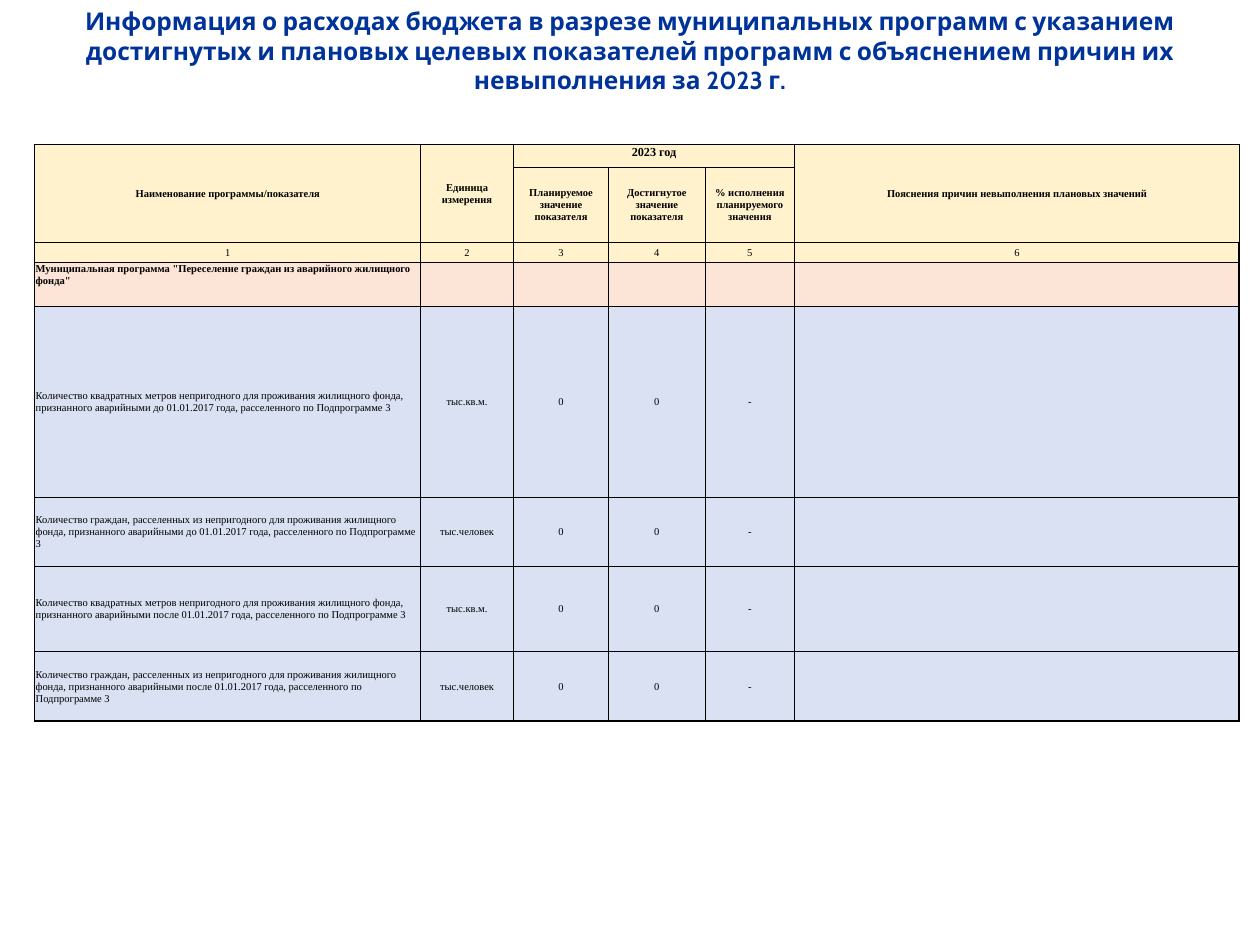
"""Builds the slide on municipal programme targets and results for 2023."""
from lxml import etree
from pptx import Presentation
from pptx import util as u
from pptx.dml.color import RGBColor
from pptx.enum import text
from pptx.oxml.ns import qn

COLOURS = {
    "title": "003399", "ink": "000000", "header": "FFF2CC",
    "programme": "FCE4D6", "indicator": "D9E1F2",
}
TITLE = ("Информация о расходах бюджета в разрезе муниципальных программ с указанием "
         "достигнутых и плановых целевых показателей программ с объяснением причин их "
         "невыполнения за 2023 г.")
HEADINGS = [
    ["Наименование программы/показателя", "Единица измерения", "2023 год", "", "",
     "Пояснения причин невыполнения плановых значений"],
    ["", "", "Планируемое значение показателя", "Достигнутое значение показателя",
     "% исполнения планируемого значения", ""],
    [str(number) for number in range(1, 7)],
]
PROGRAMME = ['Муниципальная программа "Переселение граждан из аварийного жилищного фонда"'] + [""] * 5
MEASURES = [
    ("Количество квадратных метров непригодного", "тыс.кв.м."),
    ("Количество граждан, расселенных из непригодного", "тыс.человек"),
]
INDICATORS = [
    [f"{measure} для проживания жилищного фонда, признанного аварийными {period} "
     "01.01.2017 года, расселенного по Подпрограмме 3", unit, "0", "0", "-", ""]
    for period in ("до", "после") for measure, unit in MEASURES
]
ROWS = HEADINGS + [PROGRAMME] + INDICATORS
FILLS = ["header"] * 3 + ["programme"] + ["indicator"] * 4
COLUMN_WIDTHS = [7.78, 1.87, 1.92, 1.94, 1.81, 8.96]
ROW_HEIGHTS = [0.45, 1.51, 0.4, 0.89, 3.85, 1.39, 1.72, 1.41]
MERGES = [((0, 0), (1, 0)), ((0, 1), (1, 1)), ((0, 2), (0, 4)), ((0, 5), (1, 5))]
PROGRAMME_ROW = 3


class SlideBuilder:
    """Holds the style and the current slide."""

    def __init__(self, presentation):
        self.slide = presentation.slides.add_slide(presentation.slide_layouts[5])
        self.title_font = {"name": "Cabin", "size": u.Pt(14), "bold": True}
        self.table_font = {"name": "Times New Roman", "size": u.Pt(6), "bold": False}

    def apply(self, target, formats):
        """Sets each attribute in a dict of format values."""
        for attribute, value in formats.items():
            setattr(target, attribute, value)

    def wording(self, paragraph, words, font, colour, align):
        """Adds one formatted run."""
        paragraph.alignment = align
        run = paragraph.add_run()
        run.text = words
        self.apply(run.font, font)
        run.font.color.rgb = RGBColor.from_string(COLOURS[colour])

    def title(self, words, left, top, width, height):
        """Places and formats the title placeholder."""
        heading = self.slide.shapes.title
        self.apply(heading, {"left": u.Cm(left), "top": u.Cm(top),
                             "width": u.Cm(width), "height": u.Cm(height)})
        self.apply(heading.text_frame, {
            "word_wrap": True, "vertical_anchor": text.MSO_ANCHOR.TOP,
            "auto_size": text.MSO_AUTO_SIZE.SHAPE_TO_FIT_TEXT})
        self.wording(heading.text_frame.paragraphs[0], words, self.title_font,
                     "title", text.PP_ALIGN.CENTER)

    def borders(self, cell, widths):
        """Draws the cell borders from widths in points by side."""
        properties = cell._tc.get_or_add_tcPr()
        for position, (side, width) in enumerate(widths.items()):
            line = etree.Element(qn(f"a:ln{side}"), w=str(u.Pt(width)))
            paint = etree.SubElement(line, qn("a:solidFill"))
            etree.SubElement(paint, qn("a:srgbClr"), val=COLOURS["ink"])
            properties.insert(position, line)

    def cell(self, cell, words, fill, font, align, anchor, widths):
        """Fills, frames and letters one table cell."""
        self.apply(cell, {"margin_left": u.Cm(0.02), "margin_right": u.Cm(0.02),
                          "margin_top": u.Cm(0.02), "margin_bottom": 0,
                          "vertical_anchor": anchor})
        cell.fill.solid()
        cell.fill.fore_color.rgb = RGBColor.from_string(COLOURS[fill])
        self.borders(cell, widths)
        paragraph = cell.text_frame.paragraphs[0]
        if words:
            self.wording(paragraph, words, font, "ink", align)
        else:
            etree.SubElement(paragraph._p, qn("a:endParaRPr"), sz="600")

    def table(self, left, top):
        """Adds the table of indicators."""
        frame = self.slide.shapes.add_table(
            len(ROWS), len(COLUMN_WIDTHS), u.Cm(left), u.Cm(top),
            u.Cm(sum(COLUMN_WIDTHS)), u.Cm(sum(ROW_HEIGHTS)))
        grid = frame.table
        for column, width in zip(grid.columns, COLUMN_WIDTHS):
            column.width = u.Cm(width)
        for row, height in zip(grid.rows, ROW_HEIGHTS):
            row.height = u.Cm(height)
        last_row, last_column = len(ROWS) - 1, len(COLUMN_WIDTHS) - 1
        for r, (row_words, fill) in enumerate(zip(ROWS, FILLS)):
            for c, words in enumerate(row_words):
                year, body = (r, c) == (0, 2), r >= 2
                font = self.table_font | {"bold": r < 2 or r == PROGRAMME_ROW,
                                          "size": u.Pt(7 if year else 6)}
                indicator_name = c == 0 and r >= PROGRAMME_ROW
                align = text.PP_ALIGN.LEFT if indicator_name else text.PP_ALIGN.CENTER
                at_top = year or r == PROGRAMME_ROW
                anchor = text.MSO_ANCHOR.TOP if at_top else text.MSO_ANCHOR.MIDDLE
                widths = {"L": 1 if body and c == 0 else 0.5,
                          "R": 1 if body and c == last_column else 0.5,
                          "T": 0.5, "B": 1 if r == last_row else 0.5}
                self.cell(grid.cell(r, c), words, fill, font, align, anchor, widths)
        for start, end in MERGES:
            grid.cell(*start).merge(grid.cell(*end))


def main():
    """Builds and saves the presentation."""
    presentation = Presentation()
    presentation.slide_width, presentation.slide_height = u.Cm(25.4), u.Cm(19.05)
    builder = SlideBuilder(presentation)
    builder.title(TITLE, 0.9, 0, 23.6, 1.45)
    builder.table(0.7, 2.92)
    presentation.save("out.pptx")


if __name__ == "__main__":
    main()
